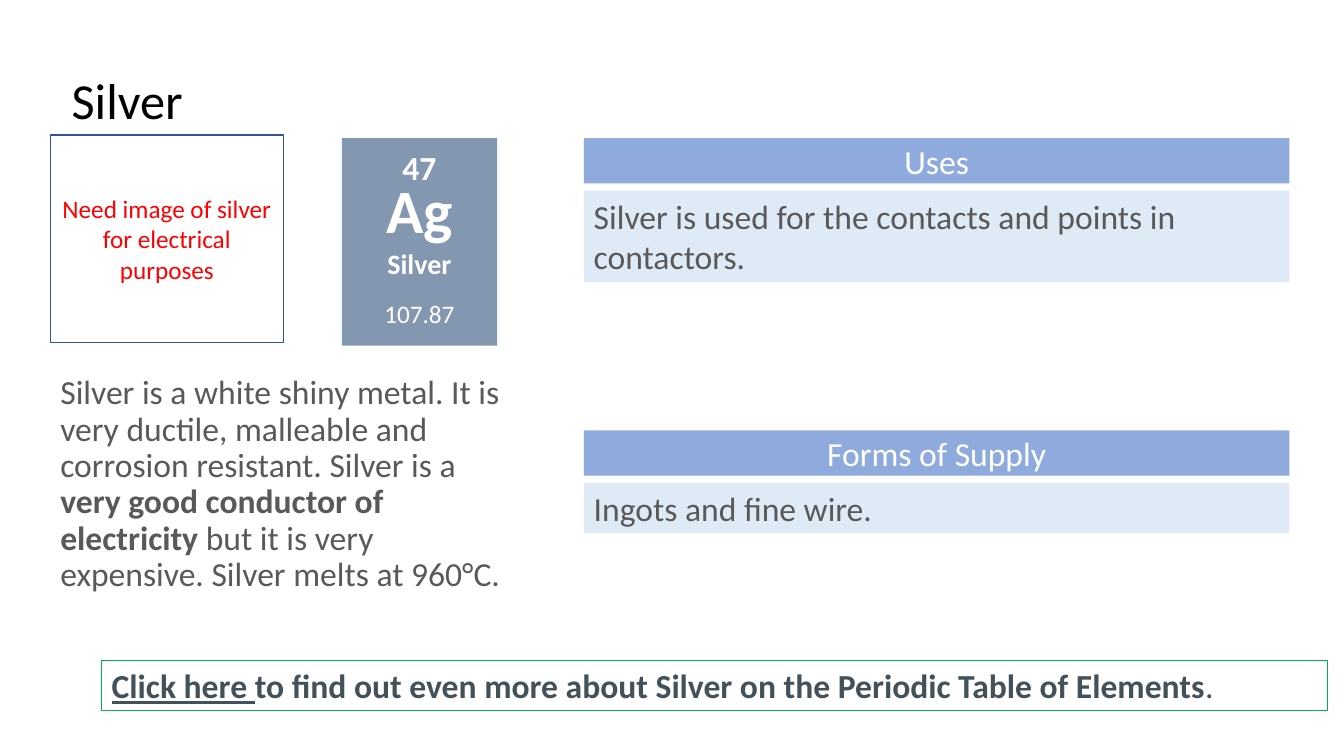
from pptx import Presentation
from pptx.dml.color import RGBColor
from pptx.enum.shapes import MSO_SHAPE
from pptx.enum.text import MSO_ANCHOR, PP_ALIGN
from pptx.util import Inches, Pt

RECTANGLE = MSO_SHAPE.RECTANGLE
TOP, MIDDLE, BOTTOM = MSO_ANCHOR.TOP, MSO_ANCHOR.MIDDLE, MSO_ANCHOR.BOTTOM
LEFT, CENTER = PP_ALIGN.LEFT, PP_ALIGN.CENTER
TITLE_ONLY = 5
FONT = "Calibri"
COLORS = {
    "title": "000000",
    "body": "595959",
    "white": "FFFFFF",
    "heading": "8FAADC",
    "panel": "DEEBF7",
    "element": "8497B0",
    "frame": "325491",
    "request": "FF0000",
    "link": "43525A",
    "link_frame": "00B050",
}


def color(name):
    return RGBColor.from_string(COLORS[name])


def write(shape, runs, size, color_name, anchor=TOP, align=LEFT):
    frame = shape.text_frame
    frame.word_wrap = True
    frame.vertical_anchor = anchor
    paragraph = frame.paragraphs[0]
    paragraph.alignment = align
    paragraph.font.name = FONT
    paragraph.font.size = Pt(size)
    paragraph.font.color.rgb = color(color_name)
    for text, bold, underline in runs:
        run = paragraph.add_run()
        run.text = text
        if bold:
            run.font.bold = True
        if underline:
            run.font.underline = True
    return paragraph


def add_text(slide, box, runs, size, color_name, anchor=TOP, align=LEFT):
    shape = slide.shapes.add_textbox(*map(Inches, box))
    return write(shape, runs, size, color_name, anchor, align)


def add_box(slide, box, fill=None, line=None, line_width=1):
    shape = slide.shapes.add_shape(RECTANGLE, *map(Inches, box))
    shape.shadow.inherit = False
    if fill:
        shape.fill.solid()
        shape.fill.fore_color.rgb = color(fill)
    else:
        shape.fill.background()
    if line:
        shape.line.color.rgb = color(line)
        shape.line.width = Pt(line_width)
    else:
        shape.line.fill.background()
    return shape


def add_title(slide, box, text):
    title = slide.shapes.title
    title.left, title.top, title.width, title.height = map(Inches, box)
    paragraph = write(title, [(text, False, False)], 36, "title", BOTTOM)
    paragraph.line_spacing = 0.9


def add_description(slide, box, runs):
    paragraph = add_text(slide, box, runs, 24, "body")
    paragraph.line_spacing = 0.9
    paragraph.space_before = Pt(10)


def add_section(slide, box, heading, text):
    left, top, width, height = box
    heading_height, offset = 0.45, 0.52
    header = add_box(slide, (left, top, width, heading_height), "heading")
    write(header, [(heading, False, False)], 24, "white", MIDDLE, CENTER)
    panel = add_box(slide, (left, top + offset, width, height - offset), "panel")
    write(panel, [(text, False, False)], 24, "body")


def add_element_tile(slide, box, number, symbol, name, mass):
    left, top, width, height = box
    add_box(slide, box, "element")
    labels = [
        (number, 0.04, 0.5, 24, True, TOP),
        (symbol, 0.29, 0.84, 44, True, TOP),
        (name, 0.98, 0.53, 20, True, MIDDLE),
        (mass, 1.55, 0.38, 18, False, MIDDLE),
    ]
    for text, offset, label_height, size, bold, anchor in labels:
        label_box = (left, top + offset, width, label_height)
        add_text(slide, label_box, [(text, bold, False)], size, "white", anchor, CENTER)


def add_image_request(slide, box, text):
    frame = add_box(slide, box, line="frame")
    write(frame, [(text, False, False)], 18, "request", MIDDLE, CENTER)


def add_link_bar(slide, box, runs):
    bar = add_box(slide, box, line="link_frame", line_width=0.75)
    write(bar, runs, 24, "link")


def main():
    presentation = Presentation()
    presentation.slide_width = Inches(13.33)
    presentation.slide_height = Inches(7.5)
    slide = presentation.slides.add_slide(presentation.slide_layouts[TITLE_ONLY])

    add_title(slide, (0.61, 0.29, 11.29, 1.05), "Silver")
    add_description(slide, (0.5, 3.68, 4.79, 2.49), [
        ("Silver is a white shiny metal. It is very ductile, malleable and "
         "corrosion resistant. Silver is a ", False, False),
        ("very good conductor of electricity ", True, False),
        ("but it is very expensive. Silver melts at 960°C.", False, False),
    ])
    add_section(slide, (5.79, 1.37, 7, 1.43), "Uses",
                "Silver is used for the contacts and points in contactors.")
    add_element_tile(slide, (3.39, 1.37, 1.54, 2.06), "47", "Ag", "Silver", "107.87")
    add_link_bar(slide, (1.01, 6.55, 12.16, 0.5), [
        ("Click here ", True, True),
        ("to find out even more about Silver on the Periodic Table of Elements",
         True, False),
        (".", False, False),
    ])
    add_section(slide, (5.79, 4.27, 7, 1.02), "Forms of Supply",
                "Ingots and fine wire.")
    add_image_request(slide, (0.5, 1.34, 2.31, 2.06),
                      "Need image of silver for electrical purposes")
    presentation.save("out.pptx")


if __name__ == "__main__":
    main()
